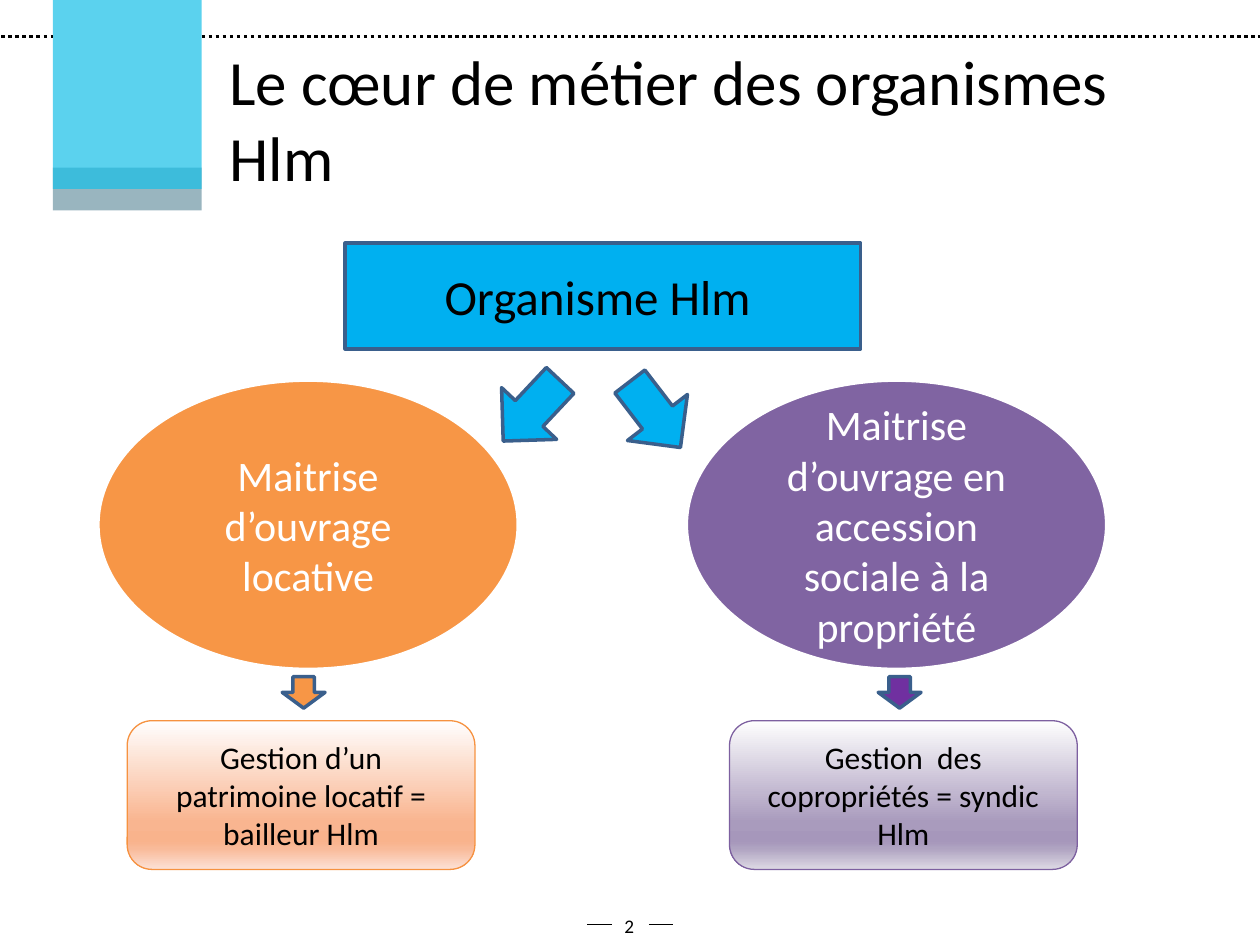
import pptx
import pptx.dml.color
import pptx.enum.dml
import pptx.enum.shapes
import pptx.enum.text
import pptx.oxml.ns
import pptx.util
from lxml import etree

Inches = pptx.util.Inches
Pt = pptx.util.Pt
Shape = pptx.enum.shapes.MSO_SHAPE
Align = pptx.enum.text.PP_ALIGN
Anchor = pptx.enum.text.MSO_ANCHOR
qn = pptx.oxml.ns.qn


def color(value):
    return pptx.dml.color.RGBColor.from_string(value)


class SlideBuilder:
    font = "Calibri"
    black = "000000"
    white = "FFFFFF"
    outline = "3A5F8C"
    gradient_positions = (0, 68, 81, 86, 100)

    def __init__(self, presentation):
        self.slide = presentation.slides.add_slide(presentation.slide_layouts[5])

    def set_text(self, shape, text, size, text_color, align=Align.CENTER, anchor=Anchor.MIDDLE):
        frame = shape.text_frame
        frame.word_wrap = True
        frame.vertical_anchor = anchor
        paragraph = frame.paragraphs[0]
        paragraph.text = text
        paragraph.alignment = align
        paragraph.font.name = self.font
        paragraph.font.size = Pt(size)
        paragraph.font.color.rgb = color(text_color)
        return frame

    def title(self, text, left, top, width, height):
        shape = self.slide.shapes.title
        shape.left, shape.top = Inches(left), Inches(top)
        shape.width, shape.height = Inches(width), Inches(height)
        frame = self.set_text(shape, text, 36, self.black, Align.LEFT, Anchor.TOP)
        frame.auto_size = pptx.enum.text.MSO_AUTO_SIZE.NONE
        frame.margin_left = Inches(0.22)

    def text_box(self, text, size, left, top, width, height):
        box = self.slide.shapes.add_textbox(
            Inches(left), Inches(top), Inches(width), Inches(height))
        self.set_text(box, text, size, self.black)

    def shape(self, kind, left, top, width, height, fill, line=None, line_width=2, rotation=0):
        shape = self.slide.shapes.add_shape(
            kind, Inches(left), Inches(top), Inches(width), Inches(height))
        shape.shadow.inherit = False
        shape.rotation = rotation
        if isinstance(fill, str):
            shape.fill.solid()
            shape.fill.fore_color.rgb = color(fill)
        else:
            self.fill_gradient(shape, fill)
        if line:
            shape.line.color.rgb = color(line)
            shape.line.width = Pt(line_width)
        else:
            shape.line.fill.background()
        return shape

    def fill_gradient(self, shape, colors):
        shape.fill.gradient()
        shape.fill.gradient_angle = 270
        stops = shape._element.spPr.find(qn("a:gradFill")).find(qn("a:gsLst"))
        for stop in list(stops):
            stops.remove(stop)
        for position, value in zip(self.gradient_positions, colors):
            stop = etree.SubElement(stops, qn("a:gs"), pos=str(position * 1000))
            etree.SubElement(stop, qn("a:srgbClr"), val=value)

    def set_opacity(self, shape, percent):
        fill = shape._element.spPr.find(qn("a:solidFill"))
        etree.SubElement(fill[0], qn("a:alpha"), val=str(percent * 1000))

    def labelled_shape(self, text, size, text_color, *geometry, margin=0.1, **style):
        shape = self.shape(*geometry, **style)
        frame = self.set_text(shape, text, size, text_color)
        frame.margin_left = frame.margin_right = Inches(margin)

    def horizontal_line(self, start, end, y, width, dash=None):
        line = self.slide.shapes.add_connector(
            pptx.enum.shapes.MSO_CONNECTOR.STRAIGHT,
            Inches(start), Inches(y), Inches(end), Inches(y))
        line.line.color.rgb = color(self.black)
        line.line.width = Pt(width)
        if dash:
            line.line.dash_style = dash
        etree.SubElement(line._element.spPr, qn("a:effectLst"))


def main():
    presentation = pptx.Presentation()
    presentation.slide_width = Inches(10)
    presentation.slide_height = Inches(7.5)
    builder = SlideBuilder(presentation)

    builder.shape(Shape.RECTANGLE, 0.42, 1.33, 1.18, 0.34, "99B5BF")
    banner = builder.shape(Shape.RECTANGLE, 0.42, 0, 1.18, 1.5, "16C0E8")
    builder.set_opacity(banner, 70)
    for start, end in ((0.01, 0.42), (1.6, 10)):
        builder.horizontal_line(start, end, 0.29, 2, pptx.enum.dml.MSO_LINE.ROUND_DOT)
    builder.title("Le cœur de métier des organismes Hlm", 1.6, 0.29, 7.98, 1.38)

    builder.labelled_shape(
        "Organisme Hlm ", 28, builder.black,
        Shape.RECTANGLE, 2.74, 1.93, 4.09, 0.84, fill="00B0F0", line=builder.outline)
    for left, top, rotation in ((3.92, 2.93, 43.2), (4.9, 2.96, 322.5)):
        builder.shape(Shape.DOWN_ARROW, left, top, 0.6, 0.66, "00B0F0",
                      builder.outline, rotation=rotation)

    branches = (
        ("Maitrise d’ouvrage locative", 0.77, "F79646", 2.24, "F79646",
         "Gestion d’un patrimoine locatif = bailleur Hlm", 1.01, "F69240",
         ("FFFEFE", "F9B590", "F9B38C", "F9BA99", "FCE1D6")),
        ("Maitrise d’ouvrage en accession sociale à la propriété", 5.44, "8064A2", 6.97, "7030A0",
         "Gestion  des copropriétés = syndic Hlm", 5.79, "7D60A0",
         ("FEFEFE", "A99BBD", "A697BB", "AFA3C1", "DDD9E4")),
    )
    for (activity, activity_left, activity_fill, arrow_left, arrow_fill,
         role, role_left, role_line, role_gradient) in branches:
        builder.labelled_shape(
            activity, 24, builder.white, Shape.OVAL, activity_left, 3.01, 3.35, 2.31,
            margin=0.15, fill=activity_fill, line=builder.white, line_width=3)
        builder.shape(Shape.DOWN_ARROW, arrow_left, 5.37, 0.34, 0.25, arrow_fill, builder.outline)
        builder.labelled_shape(
            role, 18, builder.black, Shape.ROUNDED_RECTANGLE, role_left, 5.72, 2.76, 1.18,
            margin=0.15, fill=role_gradient, line=role_line, line_width=0.75)

    builder.text_box("2", 11, 3.83, 7.15, 2.33, 0.4)
    for start, end in ((4.66, 4.86), (5.15, 5.34)):
        builder.horizontal_line(start, end, 7.34, 0.75)

    presentation.save("out.pptx")


if __name__ == "__main__":
    main()
